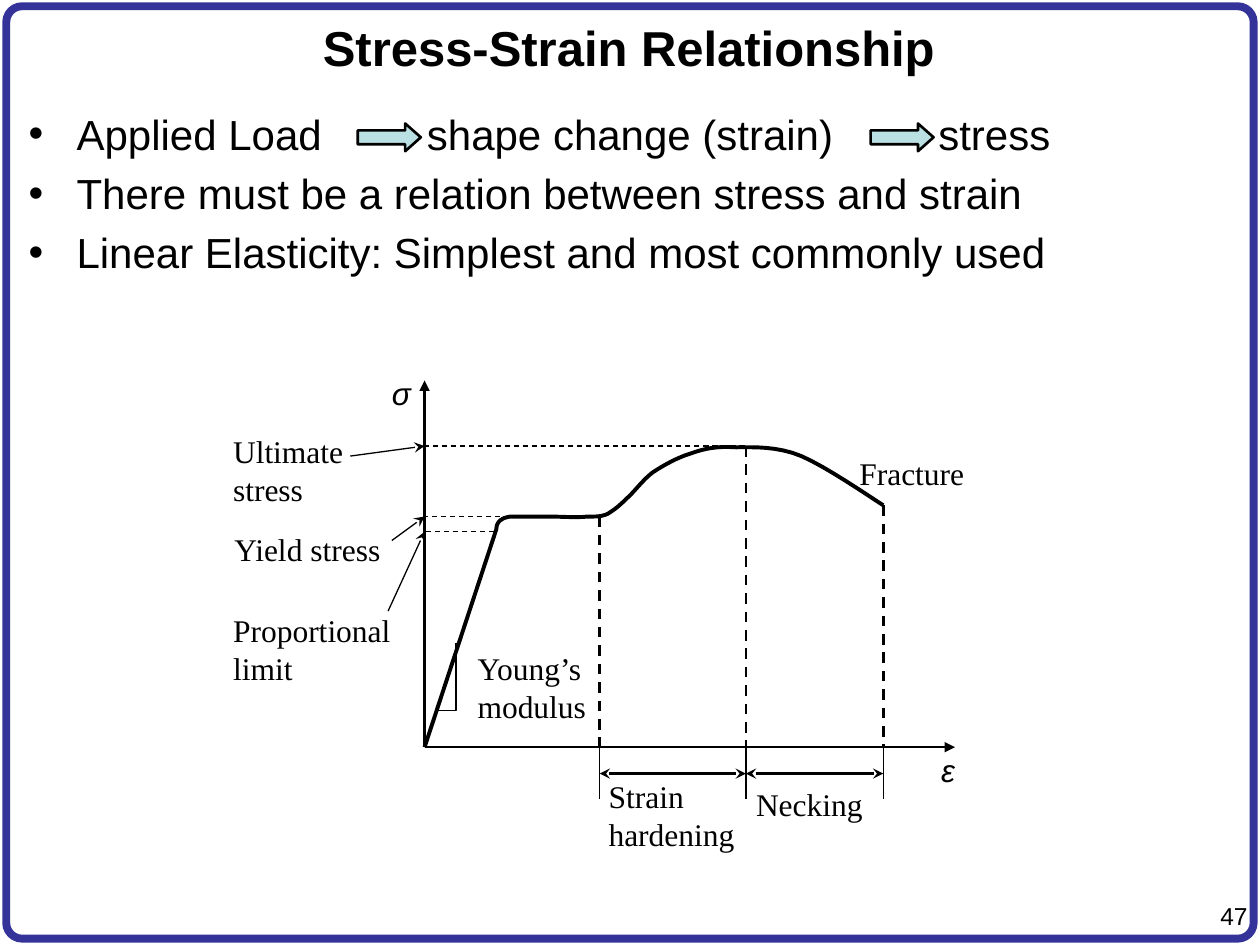
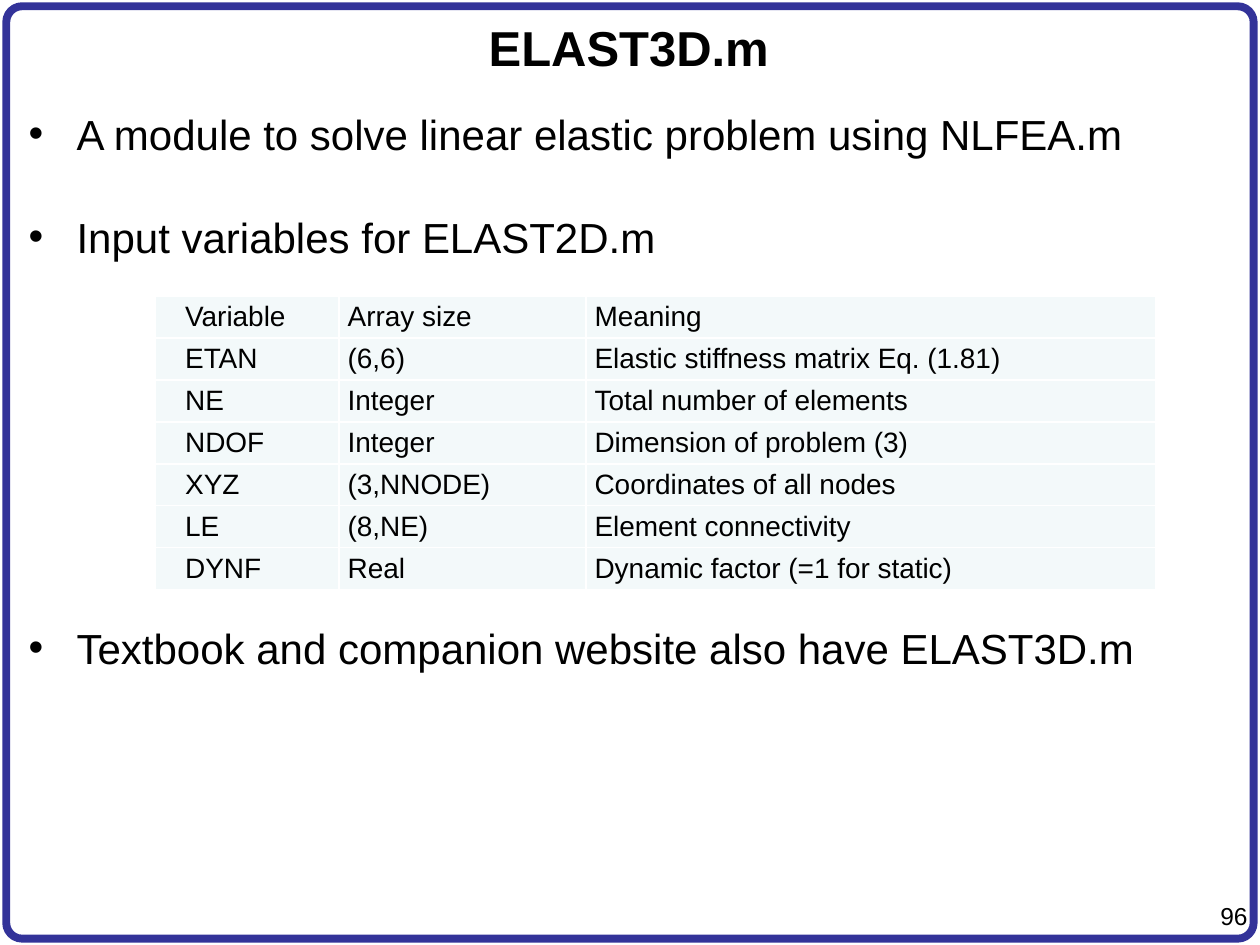
from lxml.etree import SubElement
from pptx import Presentation
from pptx.dml.color import RGBColor
from pptx.enum.dml import MSO_LINE
from pptx.enum.shapes import MSO_CONNECTOR, MSO_SHAPE
from pptx.enum.text import MSO_ANCHOR, PP_ALIGN
from pptx.oxml.ns import qn
from pptx.util import Inches, Pt

# Lengths are columns and rows of a grid of 10 by 7.5 one-inch squares.
COLUMNS, ROWS = 10, 7.5
BLACK, WHITE, FRAME, ARROW, CELL = "000000", "FFFFFF", "333399", "BBE0E3", "F3F9FA"
SANS, SERIF = "Arial", "Times New Roman"
TITLE_BOX = (0.04, 0.05, 9.9, 0.65)
BODY_BOX = (0.13, 0.81, 9.74, 6.42)
NUMBER_BOX = (9.46, 7.1, 0.54, 0.33)
GAP = "|"  # marks a wide gap inside a bullet
GAP_SPACING = 53.4  # points added to the space that fills the gap

# Stress-strain plot: columns right of and rows above the origin.
HARDENING, NECKING, FRACTURE = 1.39, 2.55, 3.64
PROPORTIONAL, YIELD, ULTIMATE, BREAKING = 1.71, 1.83, 2.39, 1.92
CURVE_START = (0.57, 1.73)
CURVE = [
    ((0.57, 1.76), (0.58, 1.78), (0.60, 1.80)),
    ((0.62, 1.81), (0.62, 1.82), (0.68, 1.83)),
    ((0.75, 1.83), (0.88, 1.83), (0.99, 1.83)),
    ((1.09, 1.83), (1.21, 1.82), (1.29, 1.83)),
    ((1.37, 1.83), (1.40, 1.83), (1.45, 1.85)),
    ((1.50, 1.88), (1.54, 1.91), (1.60, 1.97)),
    ((1.66, 2.02), (1.73, 2.12), (1.81, 2.18)),
    ((1.90, 2.24), (2.01, 2.30), (2.11, 2.33)),
    ((2.22, 2.37), (2.32, 2.39), (2.47, 2.38)),
    ((2.61, 2.38), (2.80, 2.39), (2.99, 2.31)),
    ((3.18, 2.23), (3.53, 1.99), (FRACTURE, BREAKING)),
]
PLOT_LABELS = [  # text, left, top, width, height
    ("Proportional limit", -1.52, 1.08, 1.28, 0.57),
    ("Yield stress", -1.51, 1.72, 1.22, 0.27),
    ("Ultimate stress", -1.52, 2.5, 0.93, 0.57),
    ("Strain hardening", 1.46, -0.24, 1.05, 0.57),
    ("Necking", 2.63, -0.3, 0.92, 0.32),
    ("Fracture", 3.45, 2.33, 0.88, 0.27),
    ("Young’s modulus", 0.42, 0.78, 1.01, 0.61),
]
AXIS_LABELS = [("σ", -0.26, 2.96, 0.18, 0.32), ("ε", 4.1, -0.03, 0.18, 0.32)]

VARIABLES = [
    ("Variable", "Array size", "Meaning"),
    ("ETAN", "(6,6)", "Elastic stiffness matrix Eq. (1.81)"),
    ("NE", "Integer", "Total number of elements"),
    ("NDOF", "Integer", "Dimension of problem (3)"),
    ("XYZ", "(3,NNODE)", "Coordinates of all nodes"),
    ("LE", "(8,NE)", "Element connectivity"),
    ("DYNF", "Real", "Dynamic factor (=1 for static)"),
]


def color(hex_string):
    return RGBColor.from_string(hex_string)


def inches(*lengths):
    return [Inches(length) for length in lengths]


def set_line(line, hex_string, width):
    line.color.rgb = color(hex_string)
    line.width = Pt(width)


def set_font(para, size, name=SANS, bold=False, italic=False):
    font = para.font
    font.size, font.name = Pt(size), name
    font.bold, font.italic = bold, italic
    font.color.rgb = color(BLACK)


def add_text(shapes, box, text, size, name=SANS, align=PP_ALIGN.LEFT,
             anchor=MSO_ANCHOR.TOP, inset=None, bold=False, italic=False):
    frame = shapes.add_textbox(*inches(*box)).text_frame
    frame.word_wrap = True
    frame.vertical_anchor = anchor
    if inset is not None:
        frame.margin_left = frame.margin_right = Inches(inset)
        frame.margin_top = frame.margin_bottom = Inches(inset)
    para = frame.paragraphs[0]
    para.text, para.alignment = text, align
    set_font(para, size, name, bold, italic)


def add_line(shapes, start, end, width=0.75, dashed=False, head=None, tail=None):
    line = shapes.add_connector(MSO_CONNECTOR.STRAIGHT, *inches(*start, *end))
    set_line(line.line, BLACK, width)
    if dashed:
        line.line.dash_style = MSO_LINE.DASH
    outline = line.line._get_or_add_ln()
    for tag, kind in (("a:headEnd", head), ("a:tailEnd", tail)):
        if kind:
            SubElement(outline, qn(tag), type=kind)
    SubElement(line._element.spPr, qn("a:effectLst"))


def add_outline(shapes, points, width):
    (left, top), *others = [inches(*point) for point in points]
    builder = shapes.build_freeform(left, top)
    builder.add_line_segments(others, close=False)
    outline = builder.convert_to_shape()
    outline.fill.background()
    outline.shadow.inherit = False
    set_line(outline.line, BLACK, width)


def add_page(deck, title, number):
    page = deck.slides.add_slide(deck.slide_layouts[6])
    frame = page.shapes.add_shape(MSO_SHAPE.ROUNDED_RECTANGLE,
                                  *inches(0.05, 0.05, COLUMNS - 0.1, ROWS - 0.1))
    frame.adjustments[0] = 0.017
    frame.fill.background()
    frame.shadow.inherit = False
    set_line(frame.line, FRAME, 4.5)
    add_text(page.shapes, NUMBER_BOX, str(number), 14, align=PP_ALIGN.RIGHT)
    add_text(page.shapes, TITLE_BOX, title, 28, align=PP_ALIGN.CENTER,
             anchor=MSO_ANCHOR.MIDDLE, bold=True)
    return page


def add_bullets(page, box, bullets):
    """Add bullets given as pairs of text and points of space before."""
    frame = page.shapes.add_textbox(*inches(*box)).text_frame
    frame.word_wrap = True
    for index, (text, space) in enumerate(bullets):
        para = frame.add_paragraph() if index else frame.paragraphs[0]
        para.space_before = Pt(space)
        properties = para._p.get_or_add_pPr()
        properties.set("marL", str(Inches(0.38)))
        properties.set("indent", str(-Inches(0.38)))
        SubElement(properties, qn("a:buFont"), typeface=SANS)
        SubElement(properties, qn("a:buChar"), char="•")
        set_font(para, 24)
        for position, part in enumerate(text.split(GAP)):
            if position:
                gap = para.add_run()
                gap.text = " "
                gap._r.get_or_add_rPr().set("spc", str(round(GAP_SPACING * 100)))
            para.add_run().text = part


def add_block_arrow(page, box):
    arrow = page.shapes.add_shape(MSO_SHAPE.RIGHT_ARROW, *inches(*box))
    arrow.adjustments[0], arrow.adjustments[1] = 0.5, 0.562
    arrow.shadow.inherit = False
    arrow.fill.solid()
    arrow.fill.fore_color.rgb = color(ARROW)
    set_line(arrow.line, BLACK, 1.5)


def curve_points(start, pieces, steps=8):
    """Sample a chain of cubic Bézier pieces."""
    points = [start]
    for first, second, end in pieces:
        for step in range(1, steps + 1):
            t = step / steps
            weights = ((1 - t) ** 3, 3 * t * (1 - t) ** 2, 3 * t * t * (1 - t), t ** 3)
            points.append(tuple(
                sum(weight * value for weight, value in zip(weights, values))
                for values in zip(start, first, second, end)))
        start = end
    return points


def add_stress_strain_plot(page, origin):
    shapes = page.shapes.add_group_shape().shapes

    def at(strain, stress):
        return origin[0] + strain, origin[1] - stress

    def line(start, end, **style):
        add_line(shapes, at(*start), at(*end), **style)

    for axis_end in ((4.21, 0), (0, 2.91)):
        line((0, 0), axis_end, width=1.5, tail="triangle")
    curve = [(0, 0)] + curve_points(CURVE_START, CURVE)
    add_outline(shapes, [at(*point) for point in curve], 2.25)
    slope_mark = ((0.25, 0.83), (0.25, 0.29), (0.09, 0.29))
    add_outline(shapes, [at(*point) for point in slope_mark], 0.75)

    for strain, stress in ((HARDENING, YIELD), (NECKING, ULTIMATE),
                           (FRACTURE, BREAKING)):
        line((strain, stress), (strain, 0), width=1.5, dashed=True)
        line((strain, 0.02), (strain, -0.41))
    for strain, stress in ((0.55, PROPORTIONAL), (0.67, YIELD), (2.54, ULTIMATE)):
        line((strain, stress), (0, stress), dashed=True)
    for start, end in ((HARDENING, NECKING), (NECKING, FRACTURE)):
        line((start, -0.21), (end, -0.21), width=1.5, head="stealth", tail="stealth")
    for start, stress in (((-0.29, 1.08), PROPORTIONAL), ((-0.26, 1.64), YIELD),
                          ((-0.59, 2.31), ULTIMATE)):
        line(start, (0, stress), tail="stealth")

    for text, left, top, *size in PLOT_LABELS:
        add_text(shapes, (*at(left, top), *size), text, 18, SERIF, inset=0)
    for text, left, top, *size in AXIS_LABELS:
        add_text(shapes, (*at(left, top), *size), text, 18, inset=0, italic=True)


def fill_cell(cell, text, indent):
    properties = cell._tc.get_or_add_tcPr()
    for side in ("a:lnL", "a:lnR", "a:lnT", "a:lnB"):
        border = SubElement(properties, qn(side), w=str(Pt(1)))
        SubElement(SubElement(border, qn("a:solidFill")), qn("a:srgbClr"), val=WHITE)
    cell.fill.solid()
    cell.fill.fore_color.rgb = color(CELL)
    cell.vertical_anchor = MSO_ANCHOR.MIDDLE
    cell.margin_left = cell.margin_right = Inches(0.07)
    cell.margin_top = cell.margin_bottom = 0
    para = cell.text_frame.paragraphs[0]
    para.text = text
    para._p.get_or_add_pPr().set("marL", str(Inches(indent)))
    set_font(para, 16)


def add_variable_table(page, box, widths):
    table = page.shapes.add_table(len(VARIABLES), len(widths), *inches(*box)).table
    table.first_row = table.horz_banding = False
    for column, width in zip(table.columns, widths):
        column.width = Inches(width)
    for row, values in enumerate(VARIABLES):
        for column, text in enumerate(values):
            fill_cell(table.cell(row, column), text, 0 if column else 0.17)


def add_relationship_page(deck):
    page = add_page(deck, "Stress-Strain Relationship", 47)
    add_bullets(page, BODY_BOX, [
        (f"Applied Load{GAP}shape change (strain){GAP}stress", 5),
        ("There must be a relation between stress and strain", 5),
        ("Linear Elasticity: Simplest and most commonly used", 5),
    ])
    add_stress_strain_plot(page, origin=(3.37, 5.93))
    for left in (2.84, 6.91):
        add_block_arrow(page, (left, 0.98, 0.5, 0.22))


def add_module_page(deck):
    page = add_page(deck, "ELAST3D.m", 96)
    add_bullets(page, BODY_BOX, [
        ("A module to solve linear elastic problem using NLFEA.m", 30),
        ("Input variables for ELAST2D.m", 30),
        ("Textbook and companion website also have ELAST3D.m", 206),
    ])
    add_variable_table(page, (1.23, 2.35, 7.94, 2.33), (1.46, 1.96, 4.52))


def main():
    deck = Presentation()
    deck.slide_width, deck.slide_height = inches(COLUMNS, ROWS)
    add_relationship_page(deck)
    add_module_page(deck)
    deck.save("out.pptx")


if __name__ == "__main__":
    main()
